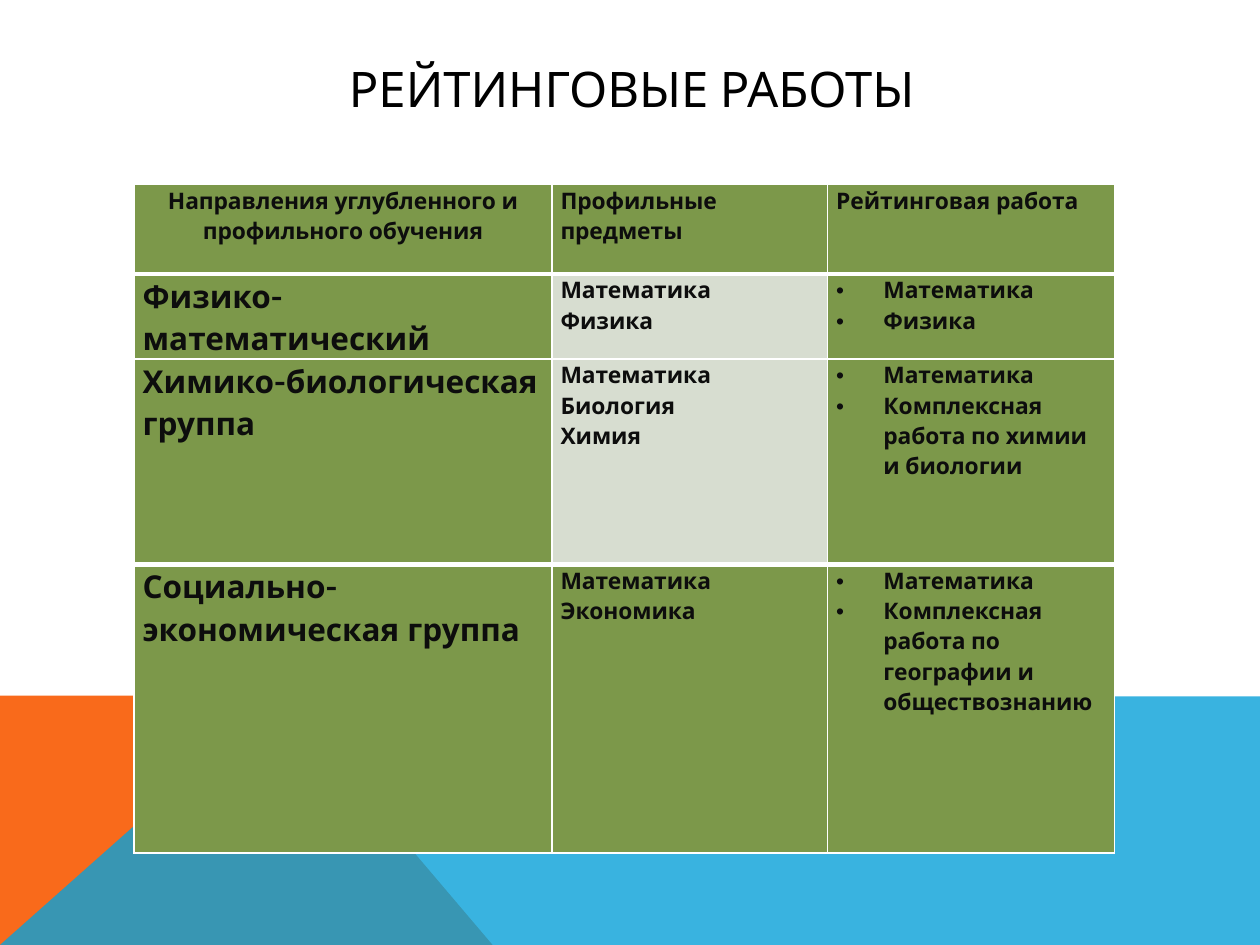
from dataclasses import dataclass

from lxml import etree
from pptx import Presentation
from pptx.dml.color import RGBColor
from pptx.enum.text import MSO_ANCHOR, PP_ALIGN
from pptx.oxml.ns import qn
from pptx.util import Pt

CENTER, LEFT = PP_ALIGN.CENTER, PP_ALIGN.LEFT
TOP, MIDDLE = MSO_ANCHOR.TOP, MSO_ANCHOR.MIDDLE
TITLE_ONLY = 5


@dataclass(frozen=True)
class Theme:
    font: str = "Karla"
    title_pt: float = 28
    group_pt: float = 18
    body_pt: float = 13
    black: str = "000000"
    ink: str = "0D0D0D"
    white: str = "FFFFFF"
    green: str = "7C984A"
    pale: str = "D7DDD0"
    orange: str = "F96A1B"
    blue: str = "08A1D9"
    thin: float = 1
    thick: float = 3


@dataclass(frozen=True)
class Band:
    points: tuple[tuple[float, float], ...]
    color: str
    opacity: int = 100


@dataclass(frozen=True)
class CellStyle:
    size: float
    fill: str
    align: PP_ALIGN = LEFT
    bullets: bool = False


@dataclass(frozen=True)
class Group:
    name: str
    subjects: tuple[str, ...]
    works: tuple[str, ...]
    subject_fill: str


THEME = Theme()
BANDS = (
    Band(((0, 540), (0, 397.5), (160.5, 397.5), (281.5, 540)), THEME.orange),
    Band(((0, 540), (160.5, 397.5), (720, 398), (720, 540)), THEME.blue, 80),
)
HEADERS = ("Направления углубленного и профильного обучения",
           "Профильные предметы", "Рейтинговая работа")
GROUPS = (
    Group("Физико-математический", ("Математика", "Физика"),
          ("Математика", "Физика"), THEME.pale),
    Group("Химико-биологическая группа", ("Математика", "Биология", "Химия"),
          ("Математика", "Комплексная работа по химии и биологии"), THEME.pale),
    Group("Социально-экономическая группа", ("Математика", "Экономика"),
          ("Математика", "Комплексная работа по географии и обществознанию"),
          THEME.green),
)
COL_WIDTHS = (238.8, 157.5, 164)
ROW_HEIGHTS = (51.1, 46.4, 117.4, 164.9)
THICK_RULES = (1, 3)  # horizontal rules, counted from the table's top edge


def rgb(value: str) -> RGBColor:
    return RGBColor.from_string(value)


def draw_band(s, band: Band) -> None:
    builder = s.shapes.build_freeform(Pt(band.points[0][0]), Pt(band.points[0][1]))
    builder.add_line_segments([(Pt(x), Pt(y)) for x, y in band.points[1:]])
    sp = builder.convert_to_shape()
    sp.shadow.inherit = False
    sp.line.fill.background()
    sp.fill.solid()
    sp.fill.fore_color.rgb = rgb(band.color)
    if band.opacity < 100:
        color = sp.fill._xPr.find(f".//{qn('a:srgbClr')}")
        etree.SubElement(color, qn("a:alpha"), val=str(band.opacity * 1000))


def add_run(p, text: str, size: float, color: str, bold: bool) -> None:
    r = p.add_run()
    r.text = text
    r.font.name = THEME.font
    r.font.size = Pt(size)
    r.font.bold = bold
    r.font.color.rgb = rgb(color)


def draw_title(s, text: str) -> None:
    sp = s.shapes.title
    sp.left, sp.top, sp.width, sp.height = Pt(65), Pt(29), Pt(592), Pt(43)
    tf = sp.text_frame
    tf.word_wrap = True
    tf.vertical_anchor = MIDDLE
    p = tf.paragraphs[0]
    p.alignment = CENTER
    add_run(p, text, THEME.title_pt, THEME.black, False)


def add_bullet(p) -> None:
    pPr = p._p.get_or_add_pPr()
    pPr.set("marL", str(Pt(27)))
    pPr.set("indent", str(-Pt(27)))
    etree.SubElement(pPr, qn("a:buFont"), typeface="Arial")
    etree.SubElement(pPr, qn("a:buChar"), char="•")


def set_borders(cell, row: int) -> None:
    """Draw the four edges, so that neighbours agree on a shared rule."""
    tcPr = cell._tc.get_or_add_tcPr()
    rules = [THEME.thick if rule in THICK_RULES else THEME.thin
             for rule in (row, row + 1)]
    edges = zip(("a:lnL", "a:lnR", "a:lnT", "a:lnB"),
                (THEME.thin, THEME.thin, *rules))
    for i, (tag, width) in enumerate(edges):
        ln = etree.Element(qn(tag), w=str(Pt(width)))
        fill = etree.SubElement(ln, qn("a:solidFill"))
        etree.SubElement(fill, qn("a:srgbClr"), val=THEME.white)
        tcPr.insert(i, ln)


def fill_cell(cell, lines: tuple[str, ...], style: CellStyle) -> None:
    cell.margin_left = cell.margin_right = Pt(5)
    cell.margin_top = cell.margin_bottom = Pt(0)
    cell.vertical_anchor = TOP
    cell.fill.solid()
    cell.fill.fore_color.rgb = rgb(style.fill)
    tf = cell.text_frame
    for i, line in enumerate(lines):
        p = tf.add_paragraph() if i else tf.paragraphs[0]
        if style.bullets:
            add_bullet(p)
        p.alignment = style.align
        p.line_spacing = 1.15
        add_run(p, line, style.size, THEME.ink, True)


def draw_table(s) -> None:
    frame = s.shapes.add_table(len(ROW_HEIGHTS), len(COL_WIDTHS), Pt(76.5), Pt(105.5),
                               Pt(sum(COL_WIDTHS)), Pt(sum(ROW_HEIGHTS)))
    table = frame.table
    for column, width in zip(table.columns, COL_WIDTHS):
        column.width = Pt(width)
    for row, height in zip(table.rows, ROW_HEIGHTS):
        row.height = Pt(height)

    for c, header in enumerate(HEADERS):
        style = CellStyle(THEME.body_pt, THEME.green, LEFT if c else CENTER)
        fill_cell(table.cell(0, c), (header,), style)
    name_style = CellStyle(THEME.group_pt, THEME.green)
    work_style = CellStyle(THEME.body_pt, THEME.green, bullets=True)
    for r, group in enumerate(GROUPS, start=1):
        fill_cell(table.cell(r, 0), (group.name,), name_style)
        fill_cell(table.cell(r, 1), group.subjects,
                  CellStyle(THEME.body_pt, group.subject_fill))
        fill_cell(table.cell(r, 2), group.works, work_style)

    for r, row in enumerate(table.rows):
        for cell in row.cells:
            set_borders(cell, r)


def main() -> None:
    prs = Presentation()
    prs.slide_width, prs.slide_height = Pt(720), Pt(540)
    s = prs.slides.add_slide(prs.slide_layouts[TITLE_ONLY])
    s.background.fill.solid()
    s.background.fill.fore_color.rgb = rgb(THEME.white)
    for band in BANDS:
        draw_band(s, band)
    draw_title(s, "РЕЙТИНГОВЫЕ РАБОТЫ")
    draw_table(s)
    prs.save("out.pptx")


if __name__ == "__main__":
    main()
